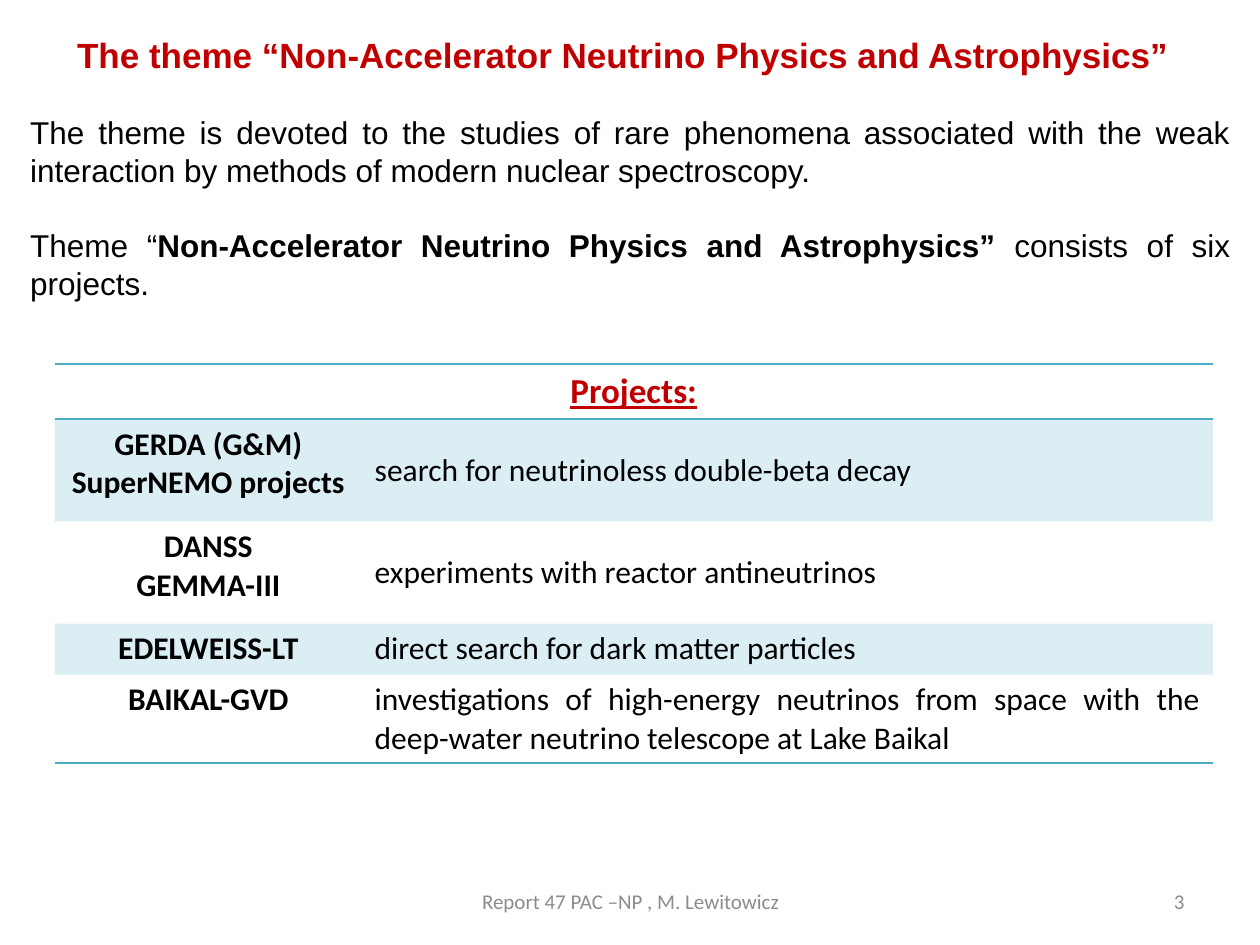
"""Build the slide on the neutrino physics theme and its projects."""
import lxml.etree
import pptx
import pptx.dml.color
import pptx.enum.text
import pptx.oxml.ns
import pptx.util

Cm, Pt = pptx.util.Cm, pptx.util.Pt
ALIGN = pptx.enum.text.PP_ALIGN
ANCHOR = pptx.enum.text.MSO_ANCHOR
qn = pptx.oxml.ns.qn

THEME = {
    "heading": {"font": "Arial", "size": 20, "color": "C00000", "bold": True},
    "body": {"font": "Arial", "size": 18, "color": "000000"},
    "strong": {"font": "Arial", "size": 18, "color": "000000", "bold": True},
    "projects": {"font": "Calibri", "size": 20, "color": "C00000", "bold": True, "underline": True},
    "name": {"font": "Calibri", "size": 18, "color": "000000", "bold": True},
    "goal": {"font": "Calibri", "size": 18, "color": "000000"},
    "footer": {"font": "Calibri", "size": 12, "color": "8C8C8C"},
    "accent": "4BACC6",
    "band_alpha": 20,
    "rule": 1,
    "line": 21.5,
    "table_style": "{2D5ABB26-0587-4C30-8999-92F81FD0307C}",
}

HEADING = "The theme “Non-Accelerator Neutrino Physics and Astrophysics”"
INTRO = [
    [("The theme is devoted to the studies of rare phenomena associated with the weak "
      "interaction by methods of modern nuclear spectroscopy.", "body")],
    [("Theme “", "body"),
     ("Non-Accelerator Neutrino Physics and Astrophysics” ", "strong"),
     ("consists of six projects.", "body")],
]
PROJECTS_HEADING = "Projects:"
PROJECTS = [
    ("GERDA (G&M)\nSuperNEMO projects", "search for neutrinoless double-beta decay", ALIGN.LEFT),
    ("DANSS\nGEMMA-III", "experiments with reactor antineutrinos", ALIGN.LEFT),
    ("EDELWEISS-LT", "direct search for dark matter particles", ALIGN.LEFT),
    ("BAIKAL-GVD", "investigations of high-energy neutrinos from space with the "
     "deep-water neutrino telescope at Lake Baikal", ALIGN.JUSTIFY),
]
FOOTER = "Report 47 PAC –NP , M. Lewitowicz"
PAGE = "3"

COLUMN_WIDTHS = (6.2, 17.15)
ROW_HEIGHTS = (1.11, 2.06, 2.06, 1.03, 1.78)


def style_run(run, style):
    """Apply a theme text style to one run."""
    run.font.name = style["font"]
    run.font.size = Pt(style["size"])
    run.font.color.rgb = pptx.dml.color.RGBColor.from_string(style["color"])
    run.font.bold = style.get("bold", False)
    run.font.underline = style.get("underline", False)


def write(frame, text, style, align):
    """Write text in a frame with one style and alignment."""
    frame.text = text
    for paragraph in frame.paragraphs:
        paragraph.alignment = align
        for run in paragraph.runs:
            style_run(run, THEME[style])


def add_box(slide, left, top, width, height, anchor=ANCHOR.MIDDLE):
    """Add a wrapping text box, measured in centimetres, and return its frame."""
    frame = slide.shapes.add_textbox(Cm(left), Cm(top), Cm(width), Cm(height)).text_frame
    frame.word_wrap = True
    frame.vertical_anchor = anchor
    return frame


def add_rule(cell, edge):
    """Draw an accent border on one edge of a cell."""
    border = lxml.etree.SubElement(cell._tc.get_or_add_tcPr(), qn(f"a:{edge}"), w=str(Pt(THEME["rule"])))
    solid = lxml.etree.SubElement(border, qn("a:solidFill"))
    lxml.etree.SubElement(solid, qn("a:srgbClr"), val=THEME["accent"])


def fill_band(cell, banded):
    """Give a cell a translucent accent fill, or none."""
    if not banded:
        cell.fill.background()
        return
    cell.fill.solid()
    cell.fill.fore_color.rgb = pptx.dml.color.RGBColor.from_string(THEME["accent"])
    color = cell._tc.tcPr.find(qn("a:solidFill")).find(qn("a:srgbClr"))
    lxml.etree.SubElement(color, qn("a:alpha"), val=str(THEME["band_alpha"] * 1000))


def add_intro(slide):
    """Add the justified introduction."""
    frame = add_box(slide, 0.36, 2.16, 24.69, 4.11, ANCHOR.TOP)
    for index, pieces in enumerate(INTRO):
        paragraph = frame.add_paragraph() if index else frame.paragraphs[0]
        paragraph.alignment = ALIGN.JUSTIFY
        paragraph.line_spacing = Pt(THEME["line"])
        paragraph.space_before = Pt(THEME["line"] if index else 0)
        for text, style in pieces:
            run = paragraph.add_run()
            run.text = text
            style_run(run, THEME[style])


def add_projects(slide):
    """Add the table of projects and their goals."""
    frame = slide.shapes.add_table(
        len(PROJECTS) + 1, len(COLUMN_WIDTHS), Cm(1.1), Cm(7.34),
        Cm(sum(COLUMN_WIDTHS)), Cm(sum(ROW_HEIGHTS)))
    table = frame.table
    table.first_row = table.horz_banding = False
    table._tbl.tblPr.find(qn("a:tableStyleId")).text = THEME["table_style"]
    for column, width in zip(table.columns, COLUMN_WIDTHS):
        column.width = Cm(width)
    for row, height in zip(table.rows, ROW_HEIGHTS):
        row.height = Cm(height)

    table.cell(0, 0).merge(table.cell(0, 1))
    write(table.cell(0, 0).text_frame, PROJECTS_HEADING, "projects", ALIGN.CENTER)
    for index, (name, goal, align) in enumerate(PROJECTS, 1):
        write(table.cell(index, 0).text_frame, name, "name", ALIGN.CENTER)
        write(table.cell(index, 1).text_frame, goal, "goal", align)
        table.cell(index, 1).vertical_anchor = ANCHOR.MIDDLE

    edges = {0: ("lnT", "lnB"), len(PROJECTS): ("lnB",)}
    for index, row in enumerate(table.rows):
        for cell in row.cells:
            for edge in edges.get(index, ()):
                add_rule(cell, edge)
            fill_band(cell, index % 2 == 1)


def main():
    """Assemble and save the presentation."""
    deck = pptx.Presentation()
    deck.slide_width, deck.slide_height = Cm(25.4), Cm(19.05)
    slide = deck.slides.add_slide(deck.slide_layouts[6])
    write(add_box(slide, 0.61, 0.53, 23.9, 1.14), HEADING, "heading", ALIGN.CENTER)
    add_intro(slide)
    add_projects(slide)
    write(add_box(slide, 8.69, 17.65, 8.05, 1.02), FOOTER, "footer", ALIGN.CENTER)
    write(add_box(slide, 18.21, 17.65, 5.92, 1.02), PAGE, "footer", ALIGN.RIGHT)
    deck.save("out.pptx")


if __name__ == "__main__":
    main()
